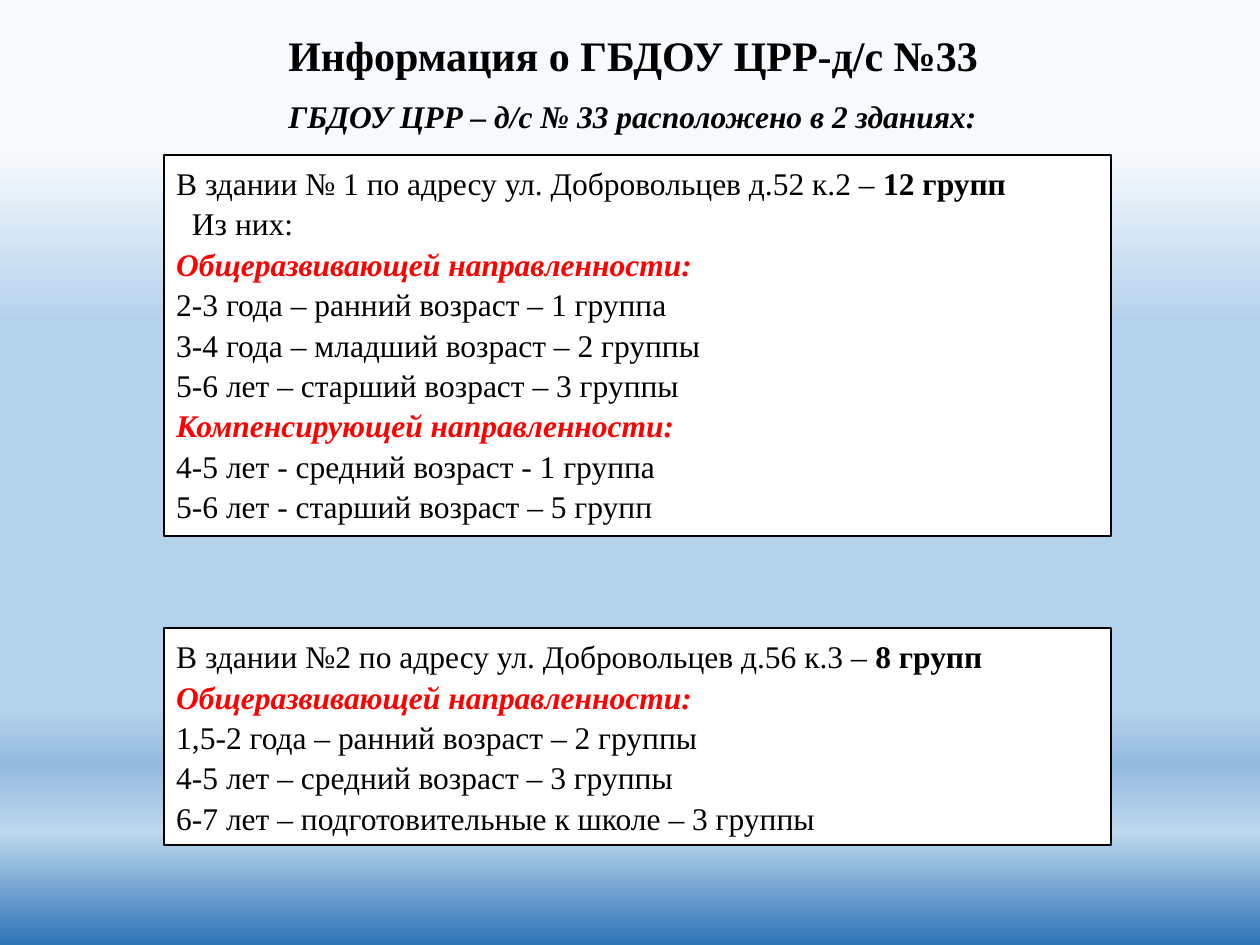
"""Build the slide on the kindergarten's two buildings and their groups."""
import copy

import pptx
import pptx.dml.color
import pptx.enum.text
import pptx.oxml.ns
import pptx.util


def rgb(value):
    return pptx.dml.color.RGBColor.from_string(value)


def add_text(s, box, lines, size=18, spacing=1.07, wrap=True):
    left, top, width, height = box
    sp = s.shapes.add_textbox(int(left * W), int(top * H), int(width * W), int(height * H))
    tf = sp.text_frame
    tf.word_wrap = wrap
    tf.auto_size = pptx.enum.text.MSO_AUTO_SIZE.SHAPE_TO_FIT_TEXT
    tf.text = "\n".join(text for text, style in lines)
    for p, (text, style) in zip(tf.paragraphs, lines):
        p.line_spacing = spacing
        if wrap:
            p.alignment = pptx.enum.text.PP_ALIGN.JUSTIFY
        if style == "indent":
            p._p.get_or_add_pPr().set("marL", str(pptx.util.Pt(9)))
        if style == "address":
            address, count = text.split(" – ")
            p.runs[0].text = address + " – "
            p.add_run().text = count
            p.runs[1].font.bold = True
        for r in p.runs:
            r.font.name = "Times New Roman"
            r.font.size = pptx.util.Pt(size)
            r.font.color.rgb = rgb("FF0000" if style == "heading" else "000000")
            if style in ("title", "subtitle", "heading"):
                r.font.bold = True
                r.font.italic = style != "title"
    return sp


prs = pptx.Presentation()
W = prs.slide_width = pptx.util.Inches(10)
H = prs.slide_height = pptx.util.Inches(7.5)
s = prs.slides.add_slide(prs.slide_layouts[6])

stops = [(0.16, "F7FAFD"), (0.34, "B5D2EC"), (0.75, "B5D2EC"),
         (0.81, "94BBDF"), (0.88, "BDD7EE"), (1, "2E75B6")]
fill = s.background.fill
fill.gradient()
fill.gradient_angle = 270
gs_list = s._element.find(".//" + pptx.oxml.ns.qn("a:gsLst"))
while len(gs_list) < len(stops):
    gs_list.append(copy.deepcopy(gs_list[0]))
for stop, (position, color) in zip(fill.gradient_stops, stops):
    stop.position = position
    stop.color.rgb = rgb(color)

add_text(s, (0.219, 0.025, 0.573, 0.067),
         [("Информация о ГБДОУ ЦРР-д/с №33", "title")], size=24, spacing=1, wrap=False)
add_text(s, (0.219, 0.093, 0.634, 0.056),
         [("ГБДОУ ЦРР – д/с № 33 расположено в 2 зданиях:", "subtitle")])

buildings = [
    (0.164, 0.403, [
        ("В здании № 1 по адресу ул. Добровольцев д.52 к.2 – 12 групп", "address"),
        ("Из них:", "indent"),
        ("Общеразвивающей направленности:", "heading"),
        ("2-3 года – ранний возраст – 1 группа", "plain"),
        ("3-4 года – младший возраст – 2 группы", "plain"),
        ("5-6 лет – старший возраст – 3 группы", "plain"),
        ("Компенсирующей направленности:", "heading"),
        ("4-5 лет - средний возраст - 1 группа", "plain"),
        ("5-6 лет - старший возраст – 5 групп", "plain"),
    ]),
    (0.665, 0.229, [
        ("В здании №2 по адресу ул. Добровольцев д.56 к.3 – 8 групп", "address"),
        ("Общеразвивающей направленности:", "heading"),
        ("1,5-2 года – ранний возраст – 2 группы", "plain"),
        ("4-5 лет – средний возраст – 3 группы", "plain"),
        ("6-7 лет – подготовительные к школе – 3 группы", "plain"),
    ]),
]
for top, height, lines in buildings:
    sp = add_text(s, (0.13, top, 0.752, height), lines)
    sp.fill.solid()
    sp.fill.fore_color.rgb = rgb("FFFFFF")
    sp.line.color.rgb = rgb("000000")
    sp.line.width = pptx.util.Pt(1)

prs.save("out.pptx")
